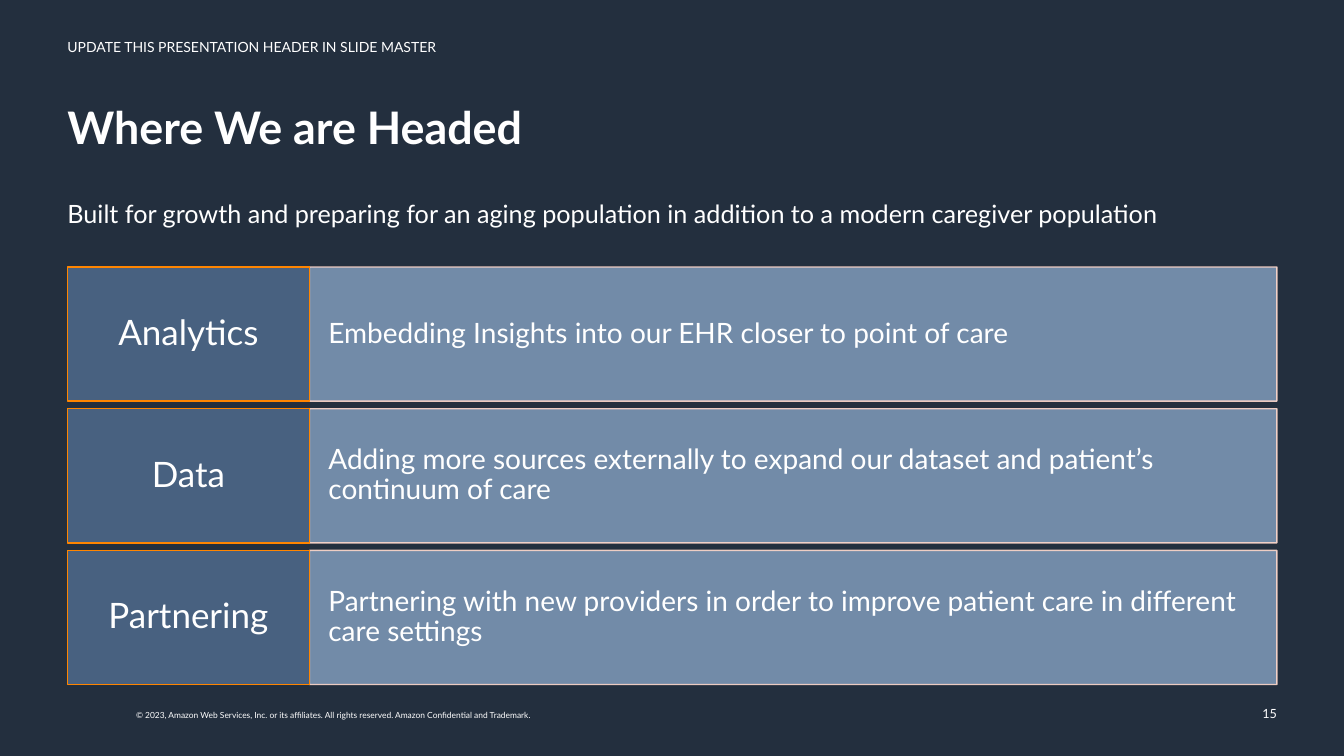
from lxml.etree import SubElement
from pptx import Presentation
from pptx.dml.color import RGBColor
from pptx.enum.shapes import MSO_SHAPE
from pptx.enum.text import MSO_ANCHOR, PP_ALIGN
from pptx.oxml.ns import qn
from pptx.util import Cm, Pt

COLORS = {
    "background": "232F3E",
    "text": "FFFFFF",
    "label": "486180",
    "label_line": "FF8500",
    "detail": "7B95B4",
    "detail_line": "FFD9CC",
}
FONT = "Lato"
LEFT, WIDTH = 1.7, 30.48
PRIORITIES = [
    ("Analytics", "Embedding Insights into our EHR closer to point of care"),
    ("Data", "Adding more sources externally to expand our dataset and patient’s continuum of care"),
    ("Partnering", "Partnering with new providers in order to improve patient care in different care settings"),
]


def color(name):
    return RGBColor.from_string(COLORS[name])


def apply_format(target, values):
    for name, value in values.items():
        setattr(target, name, value)


def write_text(shape, text, size, bold=False, align=PP_ALIGN.LEFT, spacing=1.0,
               anchor=MSO_ANCHOR.TOP, margins=(0, 0.13, 0, 0.13)):
    """Fill a shape with one paragraph; margins are left, top, right, bottom in cm."""
    frame = shape.text_frame
    sides = ("margin_left", "margin_top", "margin_right", "margin_bottom")
    apply_format(frame, dict(zip(sides, map(Cm, margins))))
    apply_format(frame, {"word_wrap": True, "vertical_anchor": anchor})
    para = frame.paragraphs[0]
    apply_format(para, {"alignment": align, "line_spacing": spacing})
    span = para.add_run()
    apply_format(span, {"text": text})
    apply_format(span.font, {"name": FONT, "size": Pt(size), "bold": bold})
    span.font.color.rgb = color("text")


def add_text(page, box, text, size, **options):
    write_text(page.shapes.add_textbox(*map(Cm, box)), text, size, **options)


def set_opacity(fill_format, percent):
    """Make a solid fill partly transparent."""
    for node in fill_format.iter(qn("a:srgbClr")):
        SubElement(node, qn("a:alpha")).set("val", str(percent * 1000))


def add_panel(page, box, fill, line):
    panel = page.shapes.add_shape(MSO_SHAPE.RECTANGLE, *map(Cm, box))
    panel.shadow.inherit = False
    panel.fill.solid()
    panel.fill.fore_color.rgb = color(fill)
    panel.line.color.rgb = color(line)
    panel.line.width = Pt(1)
    return panel


def add_heading(page, box):
    left, top, width, height = box
    add_text(page, (left, top, width, 0.66),
             "UPDATE THIS PRESENTATION HEADER IN SLIDE MASTER", 10, spacing=0.9)
    add_text(page, (left, top + 1.65, width, 1.5), "Where We are Headed", 32,
             bold=True, spacing=0.9)
    add_text(page, (left, top + height - 1.02, width, 1.02),
             "Built for growth and preparing for an aging population "
             "in addition to a modern caregiver population", 18)


def add_priority(page, box, label, detail):
    left, top, width, height = box
    label_width = width / 5
    detail_panel = add_panel(page, (left + label_width, top, width - label_width, height),
                             "detail", "detail_line")
    set_opacity(detail_panel.element.spPr, 90)
    write_text(detail_panel, detail, 20, spacing=0.9, anchor=MSO_ANCHOR.MIDDLE,
               margins=(0.48, 0.86, 0.48, 0.86))
    label_panel = add_panel(page, (left, top, label_width, height), "label", "label_line")
    write_text(label_panel, label, 25, align=PP_ALIGN.CENTER, spacing=0.9,
               anchor=MSO_ANCHOR.MIDDLE, margins=(0.33,) * 4)


def add_priorities(page, box, gap=0.19):
    left, top, width, height = box
    row_height = (height - gap * (len(PRIORITIES) - 1)) / len(PRIORITIES)
    for index, (label, detail) in enumerate(PRIORITIES):
        row_top = top + index * (row_height + gap)
        add_priority(page, (left, row_top, width, row_height), label, detail)


def add_footer(page, box):
    left, top, width, height = box
    margins = (0.25, 0.13, 0.25, 0.13)
    add_text(page, (left + 1.48, top + 0.28, 10.95, 0.5),
             "© 2023, Amazon Web Services, Inc. or its affiliates. All rights reserved. "
             "Amazon Confidential and Trademark.", 6, margins=margins)
    number_width = 7.62
    add_text(page, (left + width + 0.25 - number_width, top, number_width, height), "15", 9,
             align=PP_ALIGN.RIGHT, anchor=MSO_ANCHOR.MIDDLE, margins=margins)


def main():
    deck = Presentation()
    apply_format(deck, {"slide_width": Cm(33.87), "slide_height": Cm(19.05)})
    page = deck.slides.add_slide(deck.slide_layouts[6])
    page.background.fill.solid()
    page.background.fill.fore_color.rgb = color("background")
    add_heading(page, (LEFT, 0.89, WIDTH, 5.01))
    add_priorities(page, (LEFT, 6.73, WIDTH, 10.52))
    add_footer(page, (LEFT, 17.48, WIDTH, 1.02))
    deck.save("out.pptx")


if __name__ == "__main__":
    main()
